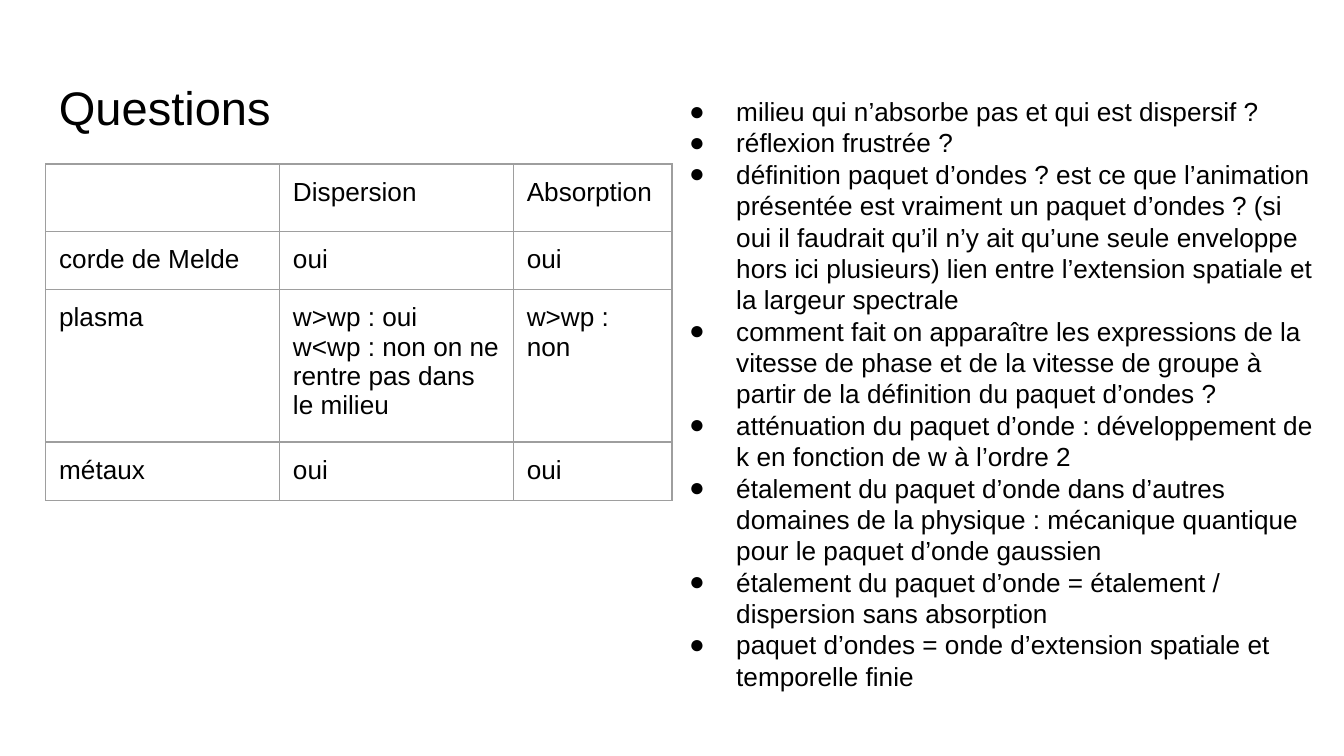
from pptx import Presentation
from pptx.dml.color import RGBColor as RGB
from pptx.enum.text import MSO_AUTO_SIZE as Auto
from pptx.oxml import parse_xml
from pptx.oxml.ns import nsdecls
from pptx.util import Inches, Pt

BLACK = RGB(0, 0, 0)
GREY = RGB(0x9E, 0x9E, 0x9E)
FONT = "Arial"
WIDE = Inches(10)
HIGH = WIDE * 9 // 16
COL, ROW = WIDE / 100, HIGH / 100  # grid of 100 columns by 100 rows
PAD = Inches(0.1)

TABLE = [
    ["", "Dispersion", "Absorption"],
    ["corde de Melde", "oui", "oui"],
    ["plasma", "w>wp : oui\nw<wp : non on ne rentre pas dans le milieu", "w>wp : non"],
    ["métaux", "oui", "oui"],
]
ITEMS = [
    "milieu qui n’absorbe pas et qui est dispersif ?",
    "réflexion frustrée ?",
    "définition paquet d’ondes ? est ce que l’animation présentée est vraiment "
    "un paquet d’ondes ? (si oui il faudrait qu’il n’y ait qu’une seule enveloppe "
    "hors ici plusieurs) lien entre l’extension spatiale et la largeur spectrale",
    "comment fait on apparaître les expressions de la vitesse de phase et de la "
    "vitesse de groupe à partir de la définition du paquet d’ondes ?",
    "atténuation du paquet d’onde : développement de k en fonction de w à l’ordre 2",
    "étalement du paquet d’onde dans d’autres domaines de la physique : "
    "mécanique quantique pour le paquet d’onde gaussien",
    "étalement du paquet d’onde = étalement / dispersion sans absorption",
    "paquet d’ondes = onde d’extension spatiale et temporelle finie",
]


def grid(x, y, w, h):
    """Turn columns and rows into slide lengths."""
    return int(x * COL), int(y * ROW), int(w * COL), int(h * ROW)


def pad(part):
    part.margin_left = part.margin_right = PAD
    part.margin_top = part.margin_bottom = PAD


def write(frame, text, size):
    frame.text = text
    for para in frame.paragraphs:
        font = para.font
        font.name, font.size, font.color.rgb = FONT, Pt(size), BLACK


def add_text(slide, box, text, size):
    frame = slide.shapes.add_textbox(*box).text_frame
    frame.word_wrap = True
    pad(frame)
    write(frame, text, size)
    return frame


def add_edges(cell):
    props = cell._tc.get_or_add_tcPr()
    for spot, side in enumerate("LRTB"):
        props.insert(spot, parse_xml(
            f'<a:ln{side} {nsdecls("a")} w="{Pt(0.75)}"><a:solidFill>'
            f'<a:srgbClr val="{GREY}"/></a:solidFill></a:ln{side}>'))


def add_grid(slide, box, shares):
    table = slide.shapes.add_table(len(TABLE), len(shares), *box).table
    table.first_row = table.horz_banding = False
    for col, share in zip(table.columns, shares):
        col.width = int(box[2] * share / sum(shares))
    for r, texts in enumerate(TABLE):
        for c, text in enumerate(texts):
            cell = table.cell(r, c)
            pad(cell)
            cell.fill.background()
            if text:
                write(cell.text_frame, text, 14)
            for para in cell.text_frame.paragraphs:
                para.line_spacing = 1.0
            add_edges(cell)


def add_list(slide, box):
    frame = add_text(slide, box, "\n".join(ITEMS), 14)
    frame.auto_size = Auto.SHAPE_TO_FIT_TEXT
    for para in frame.paragraphs:
        props = para._p.get_or_add_pPr()
        props.set("marL", str(Inches(0.5)))
        props.set("indent", str(Inches(-0.35)))
        # Bullet marks go before the font
        for mark in (f'<a:buClr {nsdecls("a")}><a:srgbClr val="{BLACK}"/></a:buClr>',
                     f'<a:buFont {nsdecls("a")} typeface="{FONT}"/>',
                     f'<a:buChar {nsdecls("a")} char="●"/>'):
            props.insert(len(props) - 1, parse_xml(mark))


def main():
    deck = Presentation()
    deck.slide_width, deck.slide_height = WIDE, HIGH
    slide = deck.slides.add_slide(deck.slide_layouts[6])
    # Title
    add_text(slide, grid(3.4, 8.65, 93.2, 11.2), "Questions", 25.2)
    # Media compared by dispersion and absorption
    add_grid(slide, grid(3.4, 21.7, 46.6, 30.6), (1.74, 1.74, 1.18))
    # Open questions
    add_list(slide, grid(48.8, 10.85, 50.3, 83.3))
    deck.save("out.pptx")


if __name__ == "__main__":
    main()
